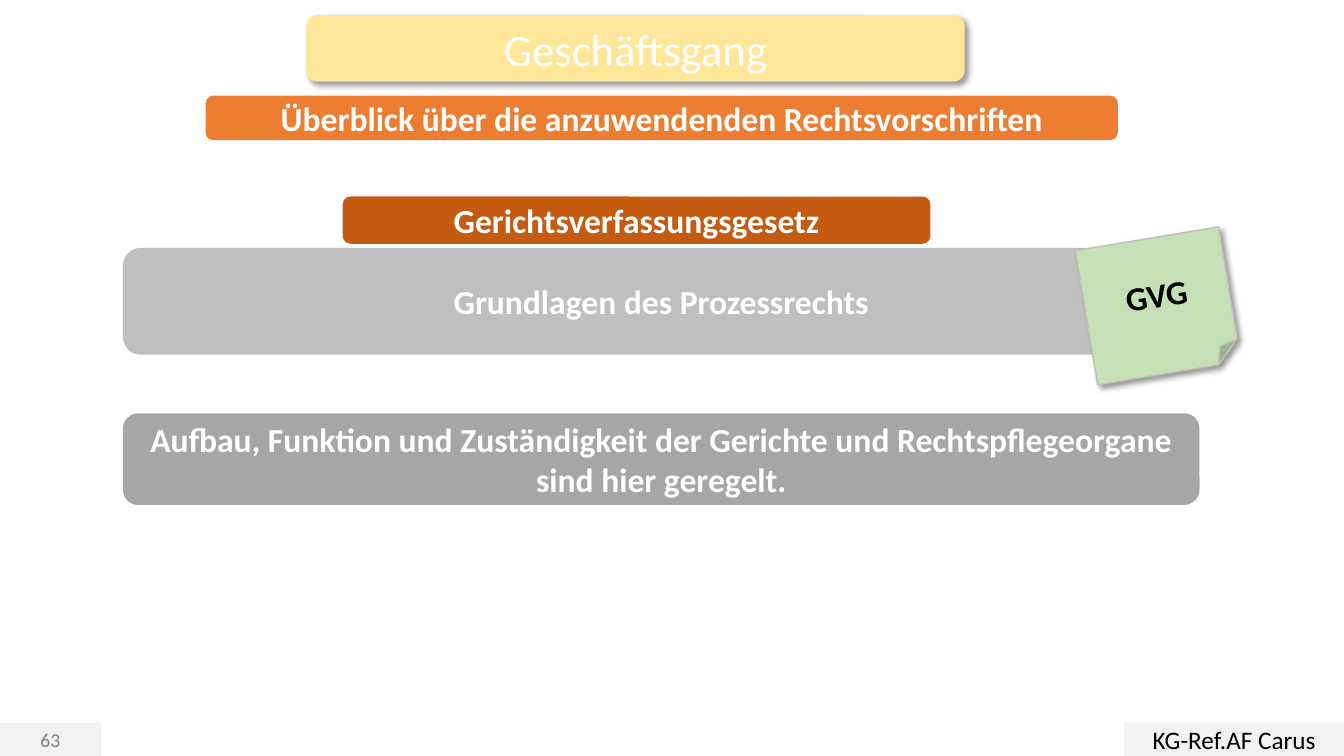
from lxml import etree
from pptx import Presentation
from pptx import util as u
from pptx.dml import color
from pptx.enum import shapes, text
from pptx.oxml import ns

COLORS = {
    "white": "FFFFFF",
    "black": "000000",
    "title": "FFE699",
    "overview": "ED7D31",
    "law": "C55A11",
    "basics": "BFBFBF",
    "scope": "A6A6A6",
    "note": "C5E0B4",
    "footer": "F2F2F2",
    "number": "808080",
}
PRESET = shapes.MSO_SHAPE


def rgb(name):
    return color.RGBColor.from_string(COLORS[name])


def add_shadow(panel):
    effects = panel._element.spPr.find(ns.qn("a:effectLst"))
    outer = etree.SubElement(effects, ns.qn("a:outerShdw"), blurRad=str(u.Pt(4)),
                             dist=str(u.Pt(3)), dir="2700000", algn="tl", rotWithShape="0")
    tint = etree.SubElement(outer, ns.qn("a:srgbClr"), val=COLORS["black"])
    etree.SubElement(tint, ns.qn("a:alpha"), val="40000")


def add_panel(slide, box, wording, fill, preset=PRESET.ROUNDED_RECTANGLE, size=24,
              ink="white", bold=True, outline=None, shadow=False):
    panel = slide.shapes.add_shape(preset, *(u.Pt(length) for length in box))
    panel.shadow.inherit = False
    panel.fill.solid()
    panel.fill.fore_color.rgb = rgb(fill)
    if outline:
        panel.line.color.rgb = rgb(outline)
        panel.line.width = u.Pt(1)
    else:
        panel.line.fill.background()
    if shadow:
        add_shadow(panel)
    frame = panel.text_frame
    frame.word_wrap = True
    frame.vertical_anchor = text.MSO_ANCHOR.MIDDLE
    paragraph = frame.paragraphs[0]
    paragraph.alignment = text.PP_ALIGN.CENTER
    run = paragraph.add_run()
    run.text = wording
    run.font.name = "Calibri"
    run.font.size = u.Pt(size)
    run.font.bold = bold
    run.font.color.rgb = rgb(ink)
    return panel


def add_header(slide, left, top, width):
    add_panel(slide, (left, top + 57.6, width, 31.7),
              "Überblick über die anzuwendenden Rechtsvorschriften", "overview")
    add_panel(slide, (left + 72, top, 470.2, 47.5), "Geschäftsgang", "title",
              size=32, bold=False, shadow=True)


def add_law_section(slide, left, top, width):
    add_panel(slide, (left + 157, top, 419.8, 33.8), "Gerichtsverfassungsgesetz", "law")
    add_panel(slide, (left, top + 36.7, width, 76.3), "Grundlagen des Prozessrechts", "basics")
    add_panel(slide, (left, top + 154.8, width, 65.5),
              "Aufbau, Funktion und Zuständigkeit der Gerichte und Rechtspflegeorgane "
              "sind hier geregelt.", "scope")
    note = add_panel(slide, (left + width - 81.4, top + 29.5, 103.7, 97.2), "GVG", "note",
                     preset=PRESET.FOLDED_CORNER, ink="black", outline="basics", shadow=True)
    note.rotation = 350.6


def add_footer(slide, width, bottom):
    add_panel(slide, (0, bottom - 23, 72, 23), "63", "footer", preset=PRESET.RECTANGLE,
              size=14, ink="number", bold=False, outline="footer")
    add_panel(slide, (width - 157, bottom - 23.8, 157, 23.8), "KG-Ref.AF Carus", "footer",
              preset=PRESET.RECTANGLE, size=18, ink="black", bold=False)


def main():
    deck = Presentation()
    deck.slide_width, deck.slide_height = u.Pt(960), u.Pt(540)
    slide = deck.slides.add_slide(deck.slide_layouts[6])
    add_header(slide, 146.9, 10.8, 651.6)
    add_law_section(slide, 87.8, 140.4, 769)
    add_footer(slide, 960, 540)
    deck.save("out.pptx")


if __name__ == "__main__":
    main()
